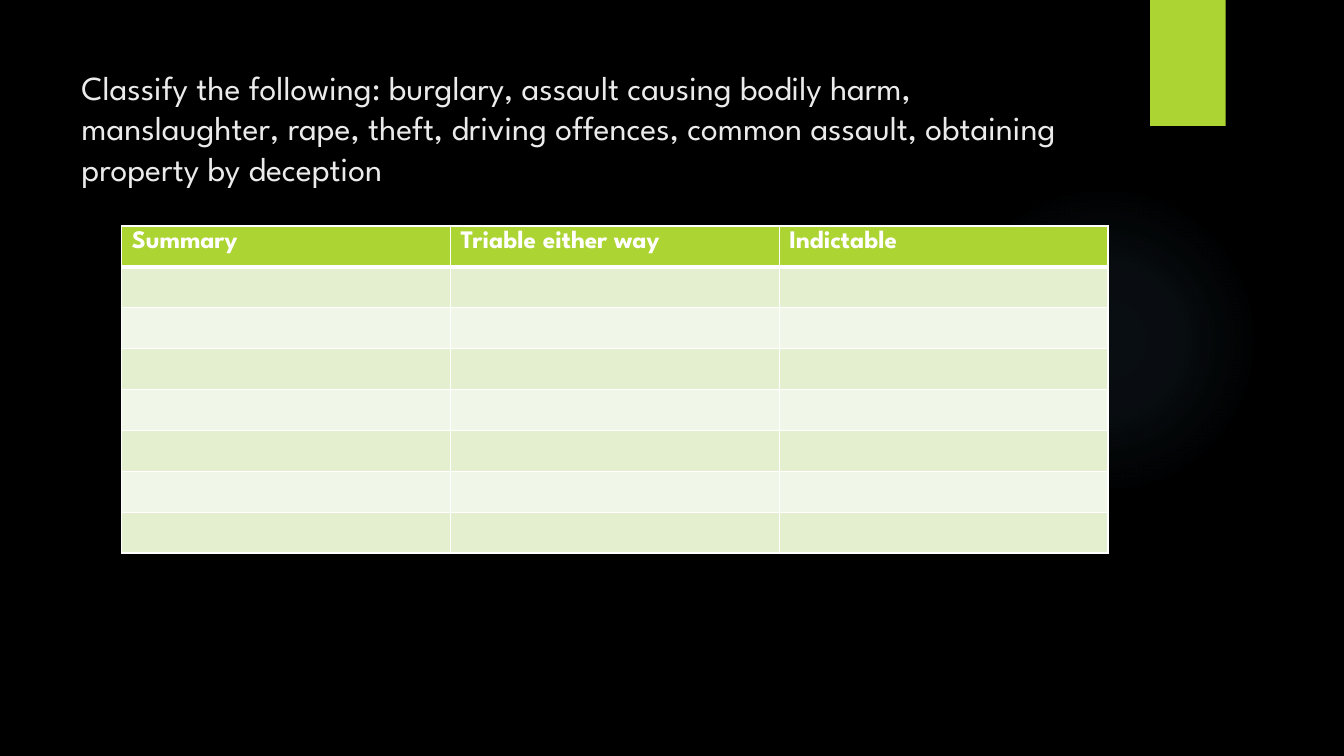
from dataclasses import dataclass

from lxml import etree
from pptx import Presentation
from pptx.dml.color import RGBColor
from pptx.enum import shapes, text
from pptx.oxml import ns
from pptx.util import Pt

# Content
TITLE = ("Classify the following: burglary, assault causing bodily harm, "
         "manslaughter, rape, theft, driving offences, common assault, "
         "obtaining property by deception")
HEADINGS = ["Summary", "Triable either way", "Indictable"]
ANSWER_ROWS = 7


@dataclass(frozen=True)
class Theme:
    font: str = "League Spartan"
    title_size: int = 24
    heading_size: int = 18
    background: str = "000000"
    title: str = "EBEBEB"
    accent: str = "ACD433"
    white: str = "FFFFFF"
    bands: tuple = ("E3EFCE", "F1F7E8")
    glow: str = "7AC4F0"
    glow_stops: tuple = ((0, 7), (36, 6), (69, 0), (100, 0))  # position, opacity in %


THEME = Theme()

# Layout in points: left, top, width, height
GLOW_BOX = (677.5, 131.8, 221.8, 221.8)
TAB_BOX = (821.5, 0, 54, 90)
TITLE_BOX = (51, 36, 741, 110)
TABLE_BOX = (87, 161.5, 704.4, 233.6)


def points(box):
    return [Pt(value) for value in box]


def paint(fill, color):
    fill.solid()
    fill.fore_color.rgb = RGBColor.from_string(color)


def add_child(parent, tag, **attributes):
    return etree.SubElement(parent, ns.qn(tag), {k: str(v) for k, v in attributes.items()})


def add_run(paragraph, words, size, color, bold=False):
    run = paragraph.add_run()
    run.text = words
    run.font.name = THEME.font
    run.font.size = Pt(size)
    run.font.bold = bold
    run.font.color.rgb = RGBColor.from_string(color)


def add_plain_shape(slide, kind, box):
    shape = slide.shapes.add_shape(kind, *points(box))
    shape.shadow.inherit = False
    shape.line.fill.background()
    return shape


def add_glow(slide):
    shape = add_plain_shape(slide, shapes.MSO_SHAPE.OVAL, GLOW_BOX)
    gradient = etree.Element(ns.qn("a:gradFill"), rotWithShape="1")
    stops = add_child(gradient, "a:gsLst")
    for position, opacity in THEME.glow_stops:
        stop = add_child(stops, "a:gs", pos=position * 1000)
        color = add_child(stop, "a:srgbClr", val=THEME.glow)
        add_child(color, "a:alpha", val=opacity * 1000)
    route = add_child(gradient, "a:path", path="circle")
    add_child(route, "a:fillToRect", l=50000, t=50000, r=50000, b=50000)
    shape._element.spPr.find(ns.qn("a:prstGeom")).addnext(gradient)


def add_borders(cell, bottom):
    properties = cell._tc.get_or_add_tcPr()
    widths = {"a:lnL": 1, "a:lnR": 1, "a:lnT": 1, "a:lnB": bottom}
    for index, (tag, width) in enumerate(widths.items()):
        line = etree.Element(ns.qn(tag), w=str(Pt(width)))
        add_child(add_child(line, "a:solidFill"), "a:srgbClr", val=THEME.white)
        properties.insert(index, line)


def add_offence_table(slide):
    row_count = ANSWER_ROWS + 1
    left, top, width, height = TABLE_BOX
    table = slide.shapes.add_table(row_count, len(HEADINGS), *points(TABLE_BOX)).table
    for column in table.columns:
        column.width = Pt(width / len(HEADINGS))
    for row_index, row in enumerate(table.rows):
        row.height = Pt(height / row_count)
        is_header = row_index == 0
        for cell, heading in zip(row.cells, HEADINGS):
            paint(cell.fill, THEME.accent if is_header else THEME.bands[(row_index - 1) % 2])
            # The rule under the header is shared with the first answer row
            add_borders(cell, bottom=3 if is_header else 1)
            if is_header:
                add_run(cell.text_frame.paragraphs[0], heading,
                        THEME.heading_size, THEME.white, bold=True)
            elif row_index == 1:
                cell._tc.tcPr.find(ns.qn("a:lnT")).set("w", str(Pt(3)))


def add_title(slide):
    title = slide.shapes.title
    title.left, title.top, title.width, title.height = points(TITLE_BOX)
    frame = title.text_frame
    frame.word_wrap = True
    frame.auto_size = text.MSO_AUTO_SIZE.NONE
    frame.vertical_anchor = text.MSO_ANCHOR.MIDDLE
    paragraph = frame.paragraphs[0]
    paragraph.alignment = text.PP_ALIGN.LEFT
    add_run(paragraph, TITLE, THEME.title_size, THEME.title)


def main():
    presentation = Presentation()
    presentation.slide_width, presentation.slide_height = Pt(960), Pt(540)
    slide = presentation.slides.add_slide(presentation.slide_layouts[5])
    paint(slide.background.fill, THEME.background)

    # Backdrop
    add_glow(slide)
    tab = add_plain_shape(slide, shapes.MSO_SHAPE.RECTANGLE, TAB_BOX)
    paint(tab.fill, THEME.accent)

    # Title and table
    add_title(slide)
    add_offence_table(slide)
    presentation.save("out.pptx")


if __name__ == "__main__":
    main()
